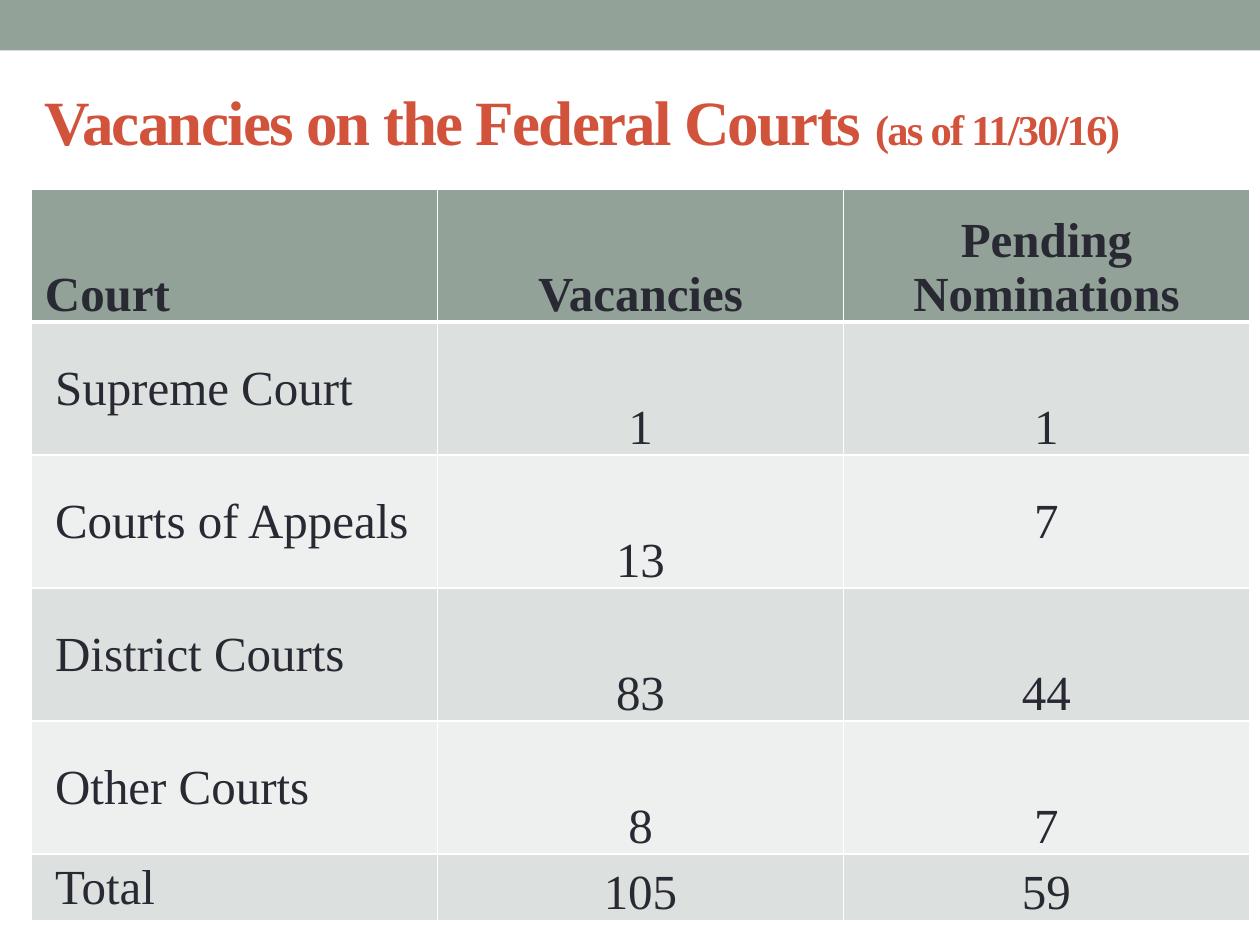
from dataclasses import dataclass

import pptx
import pptx.dml.color
import pptx.enum.shapes
import pptx.enum.text
import pptx.oxml
import pptx.oxml.ns
import pptx.util
from pptx.util import Pt

FONT = "Times New Roman"
COLORS = {
    "sage": "93A299",
    "dark_band": "DCE0DE",
    "light_band": "EEF0EF",
    "rust": "D2533C",
    "ink": "292934",
    "white": "FFFFFF",
}
ANCHOR = pptx.enum.text.MSO_ANCHOR
ALIGN = pptx.enum.text.PP_ALIGN

COLUMN_WIDTH = 232
ROW_HEIGHT = 76
TOTAL_HEIGHT = 38
HEADER_INDENT = 7.7
COURT_INDENT = 13.5
CELL_INSET = 0.75


@dataclass
class CourtRow:
    court: str
    vacancies: str
    nominations: str
    nominations_anchor: ANCHOR = ANCHOR.BOTTOM


HEADINGS = CourtRow("Court", "Vacancies", "Pending Nominations")
COURTS = [
    CourtRow("Supreme Court", "1", "1"),
    CourtRow("Courts of Appeals", "13", "7", ANCHOR.MIDDLE),
    CourtRow("District Courts", "83", "44"),
    CourtRow("Other Courts", "8", "7"),
    CourtRow("Total", "105", "59"),
]


def rgb(name: str) -> pptx.dml.color.RGBColor:
    return pptx.dml.color.RGBColor.from_string(COLORS[name])


def set_borders(cell, top: float, bottom: float) -> None:
    properties = cell._tc.get_or_add_tcPr()
    widths = {"lnL": 1, "lnR": 1, "lnT": top, "lnB": bottom}
    for position, (tag, width) in enumerate(widths.items()):
        border = pptx.oxml.parse_xml(
            f'<a:{tag} {pptx.oxml.ns.nsdecls("a")} w="{Pt(width)}"><a:solidFill>'
            f'<a:srgbClr val="{COLORS["white"]}"/></a:solidFill></a:{tag}>'
        )
        properties.insert(position, border)


def fill_cell(cell, text: str, fill: str, anchor: ANCHOR, align: ALIGN,
              indent: float, bold: bool) -> None:
    cell.text = text
    cell.fill.solid()
    cell.fill.fore_color.rgb = rgb(fill)
    cell.vertical_anchor = anchor
    cell.margin_left = Pt(indent)
    cell.margin_right = cell.margin_top = Pt(CELL_INSET)
    cell.margin_bottom = 0
    paragraph = cell.text_frame.paragraphs[0]
    paragraph.alignment = align
    paragraph.font.name = FONT
    paragraph.font.size = Pt(28)
    paragraph.font.bold = bold
    paragraph.font.color.rgb = rgb("ink")


def add_band(slide) -> None:
    band = slide.shapes.add_shape(
        pptx.enum.shapes.MSO_SHAPE.RECTANGLE, 0, 0, Pt(720), Pt(28.8))
    band.shadow.inherit = False
    band.fill.solid()
    band.fill.fore_color.rgb = rgb("sage")
    band.line.fill.background()


def add_title(slide) -> None:
    title = slide.shapes.title
    title.left, title.top, title.width, title.height = Pt(18), Pt(30), Pt(648), Pt(78)
    frame = title.text_frame
    frame.auto_size = pptx.enum.text.MSO_AUTO_SIZE.NONE
    frame.vertical_anchor = ANCHOR.MIDDLE
    paragraph = frame.paragraphs[0]
    paragraph.alignment = ALIGN.LEFT
    paragraph.font.name = FONT
    paragraph.font.bold = True
    paragraph.font.color.rgb = rgb("rust")
    for text, size in (("Vacancies on the Federal Courts ", 36),
                       ("(as of 11/30/16)", 24.3)):
        run = paragraph.add_run()
        run.text = text
        run.font.size = Pt(size)
        run.font._element.set("spc", "-100")


def add_vacancy_table(slide) -> None:
    rows = [HEADINGS, *COURTS]
    heights = [ROW_HEIGHT] * len(COURTS) + [TOTAL_HEIGHT]
    table = slide.shapes.add_table(
        len(rows), 3, Pt(18), Pt(108), Pt(3 * COLUMN_WIDTH), Pt(sum(heights))).table
    for column in table.columns:
        column.width = Pt(COLUMN_WIDTH)
    for index, (row, height) in enumerate(zip(rows, heights)):
        table.rows[index].height = Pt(height)
        header = index == 0
        fill = "sage" if header else ("dark_band" if index % 2 else "light_band")
        court, vacancies, nominations = table.rows[index].cells
        fill_cell(court, row.court, fill, ANCHOR.BOTTOM if header else ANCHOR.MIDDLE,
                  ALIGN.LEFT, HEADER_INDENT if header else COURT_INDENT, header)
        fill_cell(vacancies, row.vacancies, fill, ANCHOR.BOTTOM,
                  ALIGN.CENTER, CELL_INSET, header)
        fill_cell(nominations, row.nominations, fill, row.nominations_anchor,
                  ALIGN.CENTER, CELL_INSET, header)
        for cell in (court, vacancies, nominations):
            set_borders(cell, top=3 if index == 1 else 1, bottom=3 if header else 1)


def main() -> None:
    presentation = pptx.Presentation()
    presentation.slide_width, presentation.slide_height = Pt(720), Pt(540)
    slide = presentation.slides.add_slide(presentation.slide_layouts[5])
    add_band(slide)
    add_title(slide)
    add_vacancy_table(slide)
    presentation.save("out.pptx")


if __name__ == "__main__":
    main()
